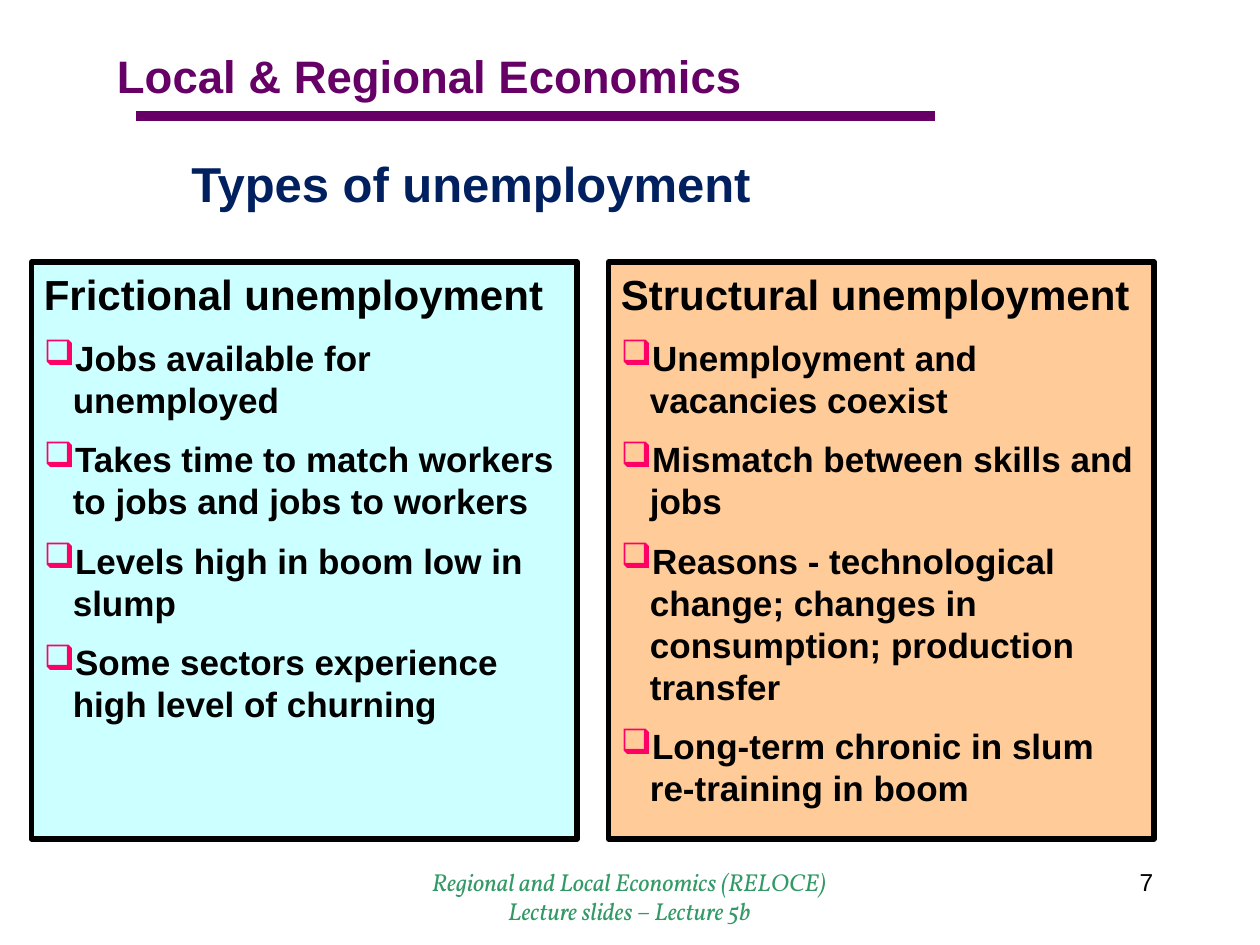
import pptx
import pptx.dml.color
import pptx.enum.shapes
import pptx.enum.text
import pptx.oxml.ns
import pptx.util
from lxml import etree

Inches, Pt = pptx.util.Inches, pptx.util.Pt
ALIGN = pptx.enum.text.PP_ALIGN
ANCHOR = pptx.enum.text.MSO_ANCHOR
qn = pptx.oxml.ns.qn

COLOURS = {
    "purple": "660066", "navy": "002060", "black": "000000", "green": "339966",
    "pink": "FF0066", "aqua": "CCFFFF", "peach": "FFCC99",
}
FORMATS = {
    "course": {"name": "Arial", "size": Pt(26), "bold": True},
    "title": {"name": "Arial", "size": Pt(28), "bold": True},
    "heading": {"name": "Arial", "size": Pt(24), "bold": True},
    "point": {"name": "Arial", "size": Pt(20), "bold": True},
    "number": {"name": "Arial", "size": Pt(14)},
    "footer": {"name": "Vollkorn", "size": Pt(14), "italic": True},
}
HANG = Inches(0.23)


def rgb(name):
    return pptx.dml.color.RGBColor.from_string(COLOURS[name])


def style(paragraph, kind, colour, align=ALIGN.LEFT):
    paragraph.alignment = align
    for key, value in FORMATS[kind].items():
        setattr(paragraph.font, key, value)
    paragraph.font.color.rgb = rgb(colour)


def add_bullet(paragraph):
    properties = paragraph._p.get_or_add_pPr()
    properties.set("marL", str(HANG))
    properties.set("indent", str(-HANG))
    colour = etree.SubElement(properties, qn("a:buClr"))
    etree.SubElement(colour, qn("a:srgbClr"), val=COLOURS["pink"])
    etree.SubElement(properties, qn("a:buChar"), char="❑")


def add_text(slide, box, lines, kind, colour, align=ALIGN.LEFT, anchor=ANCHOR.TOP):
    frame = slide.shapes.add_textbox(*box).text_frame
    frame.word_wrap = True
    frame.vertical_anchor = anchor
    for index, line in enumerate(lines):
        paragraph = frame.paragraphs[0] if index == 0 else frame.add_paragraph()
        paragraph.text = line
        style(paragraph, kind, colour, align)


def add_header(slide, left, top, width, height):
    # Course name with a thick rule beneath it
    add_text(slide, (left, top, width, height), ["Local & Regional Economics"],
             "course", "purple")
    rule_left, rule_top = left + Inches(0.25), top + Inches(0.59)
    rule = slide.shapes.add_connector(
        pptx.enum.shapes.MSO_CONNECTOR.STRAIGHT,
        rule_left, rule_top, rule_left + Inches(6.34), rule_top)
    rule.line.color.rgb = rgb("purple")
    rule.line.width = Pt(6)
    etree.SubElement(rule._element.spPr, qn("a:effectLst"))


def add_panel(slide, left, top, width, height, fill, heading, points):
    # Filled panel: a heading and its bulleted points
    panel = slide.shapes.add_shape(
        pptx.enum.shapes.MSO_SHAPE.RECTANGLE, left, top, width, height)
    panel.shadow.inherit = False
    panel.fill.solid()
    panel.fill.fore_color.rgb = rgb(fill)
    panel.line.color.rgb = rgb("black")
    panel.line.width = Pt(3)
    frame = panel.text_frame
    frame.word_wrap = True
    frame.vertical_anchor = ANCHOR.TOP
    frame.paragraphs[0].text = heading
    style(frame.paragraphs[0], "heading", "black")
    for point in points:
        paragraph = frame.add_paragraph()
        paragraph.text = point
        paragraph.space_before = Pt(10)
        add_bullet(paragraph)
        style(paragraph, "point", "black")


def add_footer(slide, left, top, width, height):
    # Lecture reference, centred, and the slide number at the right edge
    add_text(slide, (left, top, Inches(4.33), height),
             ["Regional and Local Economics (RELOCE)", "Lecture slides – Lecture 5b"],
             "footer", "green", ALIGN.CENTER)
    number_width = Inches(2.08)
    add_text(slide, (left + width - number_width, top, number_width, height),
             ["7"], "number", "black", ALIGN.RIGHT)


PANELS = [
    ("aqua", "Frictional unemployment", [
        "Jobs available for unemployed",
        "Takes time to match workers to jobs and jobs to workers",
        "Levels high in boom low in slump",
        "Some sectors experience high level of churning",
    ]),
    ("peach", "Structural unemployment", [
        "Unemployment and vacancies coexist",
        "Mismatch between skills and jobs",
        "Reasons - technological change; changes in consumption; production transfer",
        "Long-term chronic in slum re-training in boom",
    ]),
]


def main():
    deck = pptx.Presentation()
    deck.slide_width, deck.slide_height = Inches(10), Inches(7.5)
    slide = deck.slides.add_slide(deck.slide_layouts[6])

    add_header(slide, Inches(0.83), Inches(0.33), Inches(6.67), Inches(0.54))
    add_text(slide, (Inches(1.42), Inches(1.08), Inches(5.58), Inches(0.75)),
             ["Types of unemployment"], "title", "navy", anchor=ANCHOR.MIDDLE)

    panel_width, gap = Inches(4.33), Inches(0.25)
    for column, (fill, heading, points) in enumerate(PANELS):
        left = Inches(0.25) + column * (panel_width + gap)
        add_panel(slide, left, Inches(2.08), panel_width, Inches(4.58),
                  fill, heading, points)

    add_footer(slide, Inches(2.83), Inches(6.83), Inches(6.42), Inches(0.5))
    deck.save("out.pptx")


if __name__ == "__main__":
    main()
